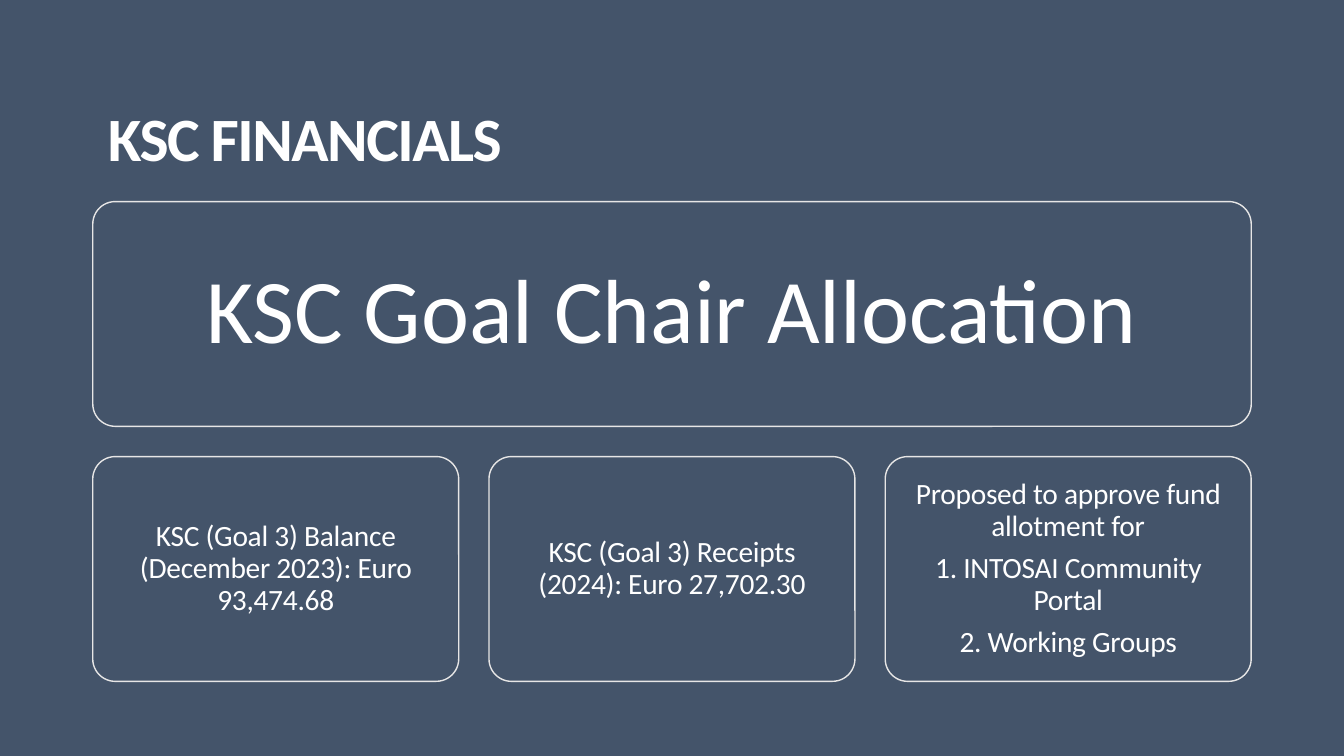
import pptx
import pptx.util
import pptx.dml.color
import pptx.enum.shapes
import pptx.enum.text

Inches = pptx.util.Inches
RGBColor = pptx.dml.color.RGBColor

TITLE = "KSC FINANCIALS"
ALLOCATION = ["KSC Goal Chair Allocation"]
DETAILS = [
    ["KSC (Goal 3) Balance (December 2023): Euro 93,474.68"],
    ["KSC (Goal 3) Receipts (2024): Euro 27,702.30"],
    [
        "Proposed to approve fund allotment for",
        "1. INTOSAI Community Portal",
        "2. Working Groups",
    ],
]

SLATE = RGBColor(0x44, 0x54, 0x6A)
OUTLINE = RGBColor(0xE7, 0xE6, 0xE6)
WHITE = RGBColor(0xFF, 0xFF, 0xFF)
FONT = "Calibri"

LEFT, TOP = 0.92, 2.0
FULL_WIDTH, CARD_HEIGHT, GAP = 11.49, 2.23, 0.3
CORNER = 0.1


def write(frame, lines, *, size, align, insets, bold=False, tracking=0,
          before=0, after=0, indent=0):
    """Fill a frame with one paragraph per line; insets are left, top, right, bottom."""
    frame.word_wrap = True
    frame.vertical_anchor = pptx.enum.text.MSO_ANCHOR.MIDDLE
    (frame.margin_left, frame.margin_top,
     frame.margin_right, frame.margin_bottom) = map(Inches, insets)
    for number, line in enumerate(lines):
        paragraph = frame.add_paragraph() if number else frame.paragraphs[0]
        paragraph.alignment = align
        paragraph.line_spacing = 0.9
        paragraph.space_before = pptx.util.Pt(before)
        paragraph.space_after = pptx.util.Pt(after)
        if indent:
            paragraph._p.get_or_add_pPr().set("marL", str(Inches(indent)))
        run = paragraph.add_run()
        run.text = line
        run.font.name = FONT
        run.font.size = pptx.util.Pt(size)
        run.font.bold = bold
        run.font.color.rgb = WHITE
        if tracking:
            run._r.get_or_add_rPr().set("spc", str(round(tracking * 100)))


def add_card(slide, lines, left, top, width, *, size, inset, tracking=0):
    card = slide.shapes.add_shape(
        pptx.enum.shapes.MSO_SHAPE.ROUNDED_RECTANGLE,
        Inches(left), Inches(top), Inches(width), Inches(CARD_HEIGHT))
    card.adjustments[0] = CORNER
    card.shadow.inherit = False
    card.fill.solid()
    card.fill.fore_color.rgb = SLATE
    card.line.color.rgb = OUTLINE
    card.line.width = pptx.util.Pt(1)
    write(card.text_frame, lines, size=size, insets=[inset] * 4, tracking=tracking,
          align=pptx.enum.text.PP_ALIGN.CENTER, after=0.35 * size)


def main():
    deck = pptx.Presentation()
    deck.slide_width, deck.slide_height = Inches(13.33), Inches(7.5)
    slide = deck.slides.add_slide(deck.slide_layouts[6])
    slide.background.fill.solid()
    slide.background.fill.fore_color.rgb = SLATE

    heading = slide.shapes.add_textbox(
        Inches(LEFT), Inches(0.4), Inches(11.5), Inches(1.45))
    write(heading.text_frame, [TITLE], size=44, bold=True, tracking=-1.1,
          align=pptx.enum.text.PP_ALIGN.LEFT, insets=(0, 0.55, 0, 0),
          before=1.1, indent=0.15)

    add_card(slide, ALLOCATION, LEFT, TOP, FULL_WIDTH, size=65, inset=0.27)
    detail_width = (FULL_WIDTH - GAP * (len(DETAILS) - 1)) / len(DETAILS)
    for column, lines in enumerate(DETAILS):
        add_card(slide, lines, LEFT + column * (detail_width + GAP),
                 TOP + CARD_HEIGHT + GAP, detail_width,
                 size=21, inset=0.09, tracking=-0.2)

    deck.save("out.pptx")


if __name__ == "__main__":
    main()
